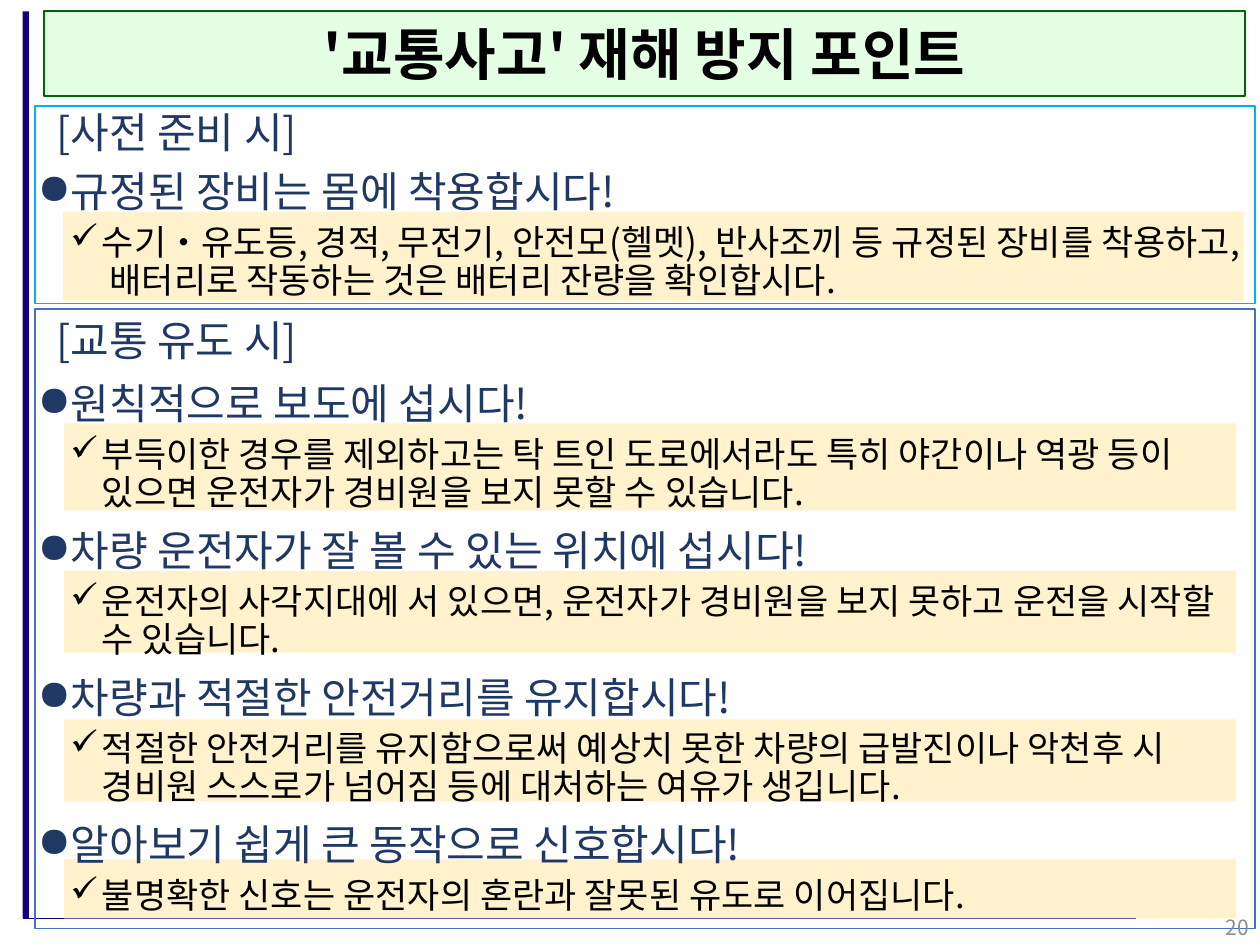
from lxml.etree import SubElement
from pptx import Presentation
from pptx.dml.color import RGBColor
from pptx.enum.shapes import MSO_CONNECTOR as Connector, MSO_SHAPE as Shape
from pptx.enum.text import MSO_ANCHOR as Anchor, PP_ALIGN as Align
from pptx.oxml.ns import qn
from pptx.util import Inches, Pt

THEME = {
    "font": "Noto Sans CJK JP",
    "title_size": 32, "head_size": 24, "detail_size": 20, "number_size": 12,
    "ink": "000000", "navy": "203864", "grey": "8C8C8C", "rail": "140078",
    "title_fill": "CCFFCC", "title_line": "006600", "band": "FFF2CC",
}
TITLE = "'교통사고' 재해 방지 포인트"
PAGE_NUMBER = "20"

# Point: heading, detail, band (left, top, width, height), heading indent
SECTIONS = [
    {"label": "[사전 준비 시]", "label_top": 0.8, "text_top": 1.31, "text_height": 1.1,
     "frame": (0.28, 0.84, 9.68, 1.57), "line": "00B0F0",
     "points": [
         ("규정된 장비는 몸에 착용합시다!",
          "수기・유도등, 경적, 무전기, 안전모(헬멧), 반사조끼 등 규정된 장비를 "
          "착용하고, 배터리로 작동하는 것은 배터리 잔량을 확인합시다.",
          (0.5, 1.68, 9.37, 0.71), 0.25),
     ]},
    {"label": "[교통 유도 시]", "label_top": 2.45, "text_top": 2.99, "text_height": 4.4,
     "frame": (0.28, 2.45, 9.68, 4.92), "line": "4472C4",
     "points": [
         ("원칙적으로 보도에 섭시다!",
          "부득이한 경우를 제외하고는 탁 트인 도로에서라도 특히 야간이나 역광 등이 "
          "있으면 운전자가 경비원을 보지 못할 수 있습니다.",
          (0.51, 3.36, 9.3, 0.69), 0.25),
         ("차량 운전자가 잘 볼 수 있는 위치에 섭시다!",
          "운전자의 사각지대에 서 있으면, 운전자가 경비원을 보지 못하고 운전을 "
          "시작할 수 있습니다.",
          (0.51, 4.53, 9.3, 0.65), 0.25),
         ("차량과 적절한 안전거리를 유지합시다!",
          "적절한 안전거리를 유지함으로써 예상치 못한 차량의 급발진이나 악천후 시 "
          "경비원 스스로가 넘어짐 등에 대처하는 여유가 생깁니다.",
          (0.51, 5.71, 9.3, 0.65), 0.25),
         ("알아보기 쉽게 큰 동작으로 신호합시다!",
          "불명확한 신호는 운전자의 혼란과 잘못된 유도로 이어집니다.",
          (0.51, 6.82, 9.3, 0.47), 0.01),
     ]},
]


def color(name):
    return RGBColor.from_string(THEME.get(name, name))


def add_rect(slide, box, fill=None, line=None, alpha=None):
    rect = slide.shapes.add_shape(Shape.RECTANGLE, *map(Inches, box))
    rect.shadow.inherit = False
    if fill:
        rect.fill.solid()
        rect.fill.fore_color.rgb = color(fill)
        if alpha:
            tint = rect.fill._xPr.find(qn("a:solidFill"))[0]
            SubElement(tint, qn("a:alpha"), val=str(alpha * 1000))
    else:
        rect.fill.background()
    if line:
        rect.line.color.rgb = color(line)
        rect.line.width = Pt(1)
    else:
        rect.line.fill.background()
    return rect


def add_textbox(slide, box):
    frame = slide.shapes.add_textbox(*map(Inches, box)).text_frame
    frame.word_wrap = True
    return frame


def write(paragraph, text, size="head_size", ink="navy", bold=False, align=None,
          bullet=None, indent=0, before=0):
    """Fill a paragraph; a bullet hangs a quarter inch left of the indent."""
    paragraph.alignment = align
    if bullet:
        paragraph.line_spacing = 0.9
        paragraph.space_before = Pt(before)
        props = paragraph._p.get_or_add_pPr()
        props.set("marL", str(Inches(indent)))
        props.set("indent", str(Inches(-0.25)))
        SubElement(props, qn("a:buChar"), char=bullet)
    run = paragraph.add_run()
    run.text = text
    run.font.size = Pt(THEME[size])
    run.font.bold = bold
    run.font.color.rgb = color(ink)
    run.font.name = THEME["font"]
    SubElement(run._r.get_or_add_rPr(), qn("a:ea"), typeface=THEME["font"])


def add_points(slide, section):
    frame = add_textbox(slide, (0.2, section["text_top"], 9.68, section["text_height"]))
    for order, (heading, detail, _, indent) in enumerate(section["points"]):
        head = frame.add_paragraph() if order else frame.paragraphs[0]
        write(head, heading, bullet="●", indent=indent, before=10)
        write(frame.add_paragraph(), detail, size="detail_size", ink="ink",
              bullet="✓", indent=0.51, before=5)


def main():
    deck = Presentation()
    deck.slide_width, deck.slide_height = Inches(10), Inches(7.5)
    slide = deck.slides.add_slide(deck.slide_layouts[6])

    add_rect(slide, (0.18, 0.09, 0.05, 7.2), fill="rail")
    base = slide.shapes.add_connector(
        Connector.STRAIGHT, *map(Inches, (0.18, 7.29, 9.02, 7.29)))
    base.line.color.rgb = color("rail")
    base.line.width = Pt(1)
    SubElement(base._element.spPr, qn("a:effectLst"))

    for section in SECTIONS:
        for *_, band, _ in section["points"]:
            add_rect(slide, band, fill="band")

    banner = add_rect(slide, (0.35, 0.09, 9.53, 0.67), "title_fill", "title_line", alpha=50)
    banner.text_frame.vertical_anchor = Anchor.MIDDLE
    write(banner.text_frame.paragraphs[0], TITLE, size="title_size", ink="ink",
          bold=True, align=Align.CENTER)

    for section in SECTIONS:
        add_points(slide, section)
        label = add_textbox(slide, (0.35, section["label_top"], 2.6, 0.5))
        write(label.paragraphs[0], section["label"])
        add_rect(slide, section["frame"], line=section["line"])

    number = add_textbox(slide, (7.76, 7.16, 2.25, 0.4))
    number.vertical_anchor = Anchor.MIDDLE
    write(number.paragraphs[0], PAGE_NUMBER, size="number_size", ink="grey",
          align=Align.RIGHT)

    deck.save("out.pptx")


if __name__ == "__main__":
    main()
